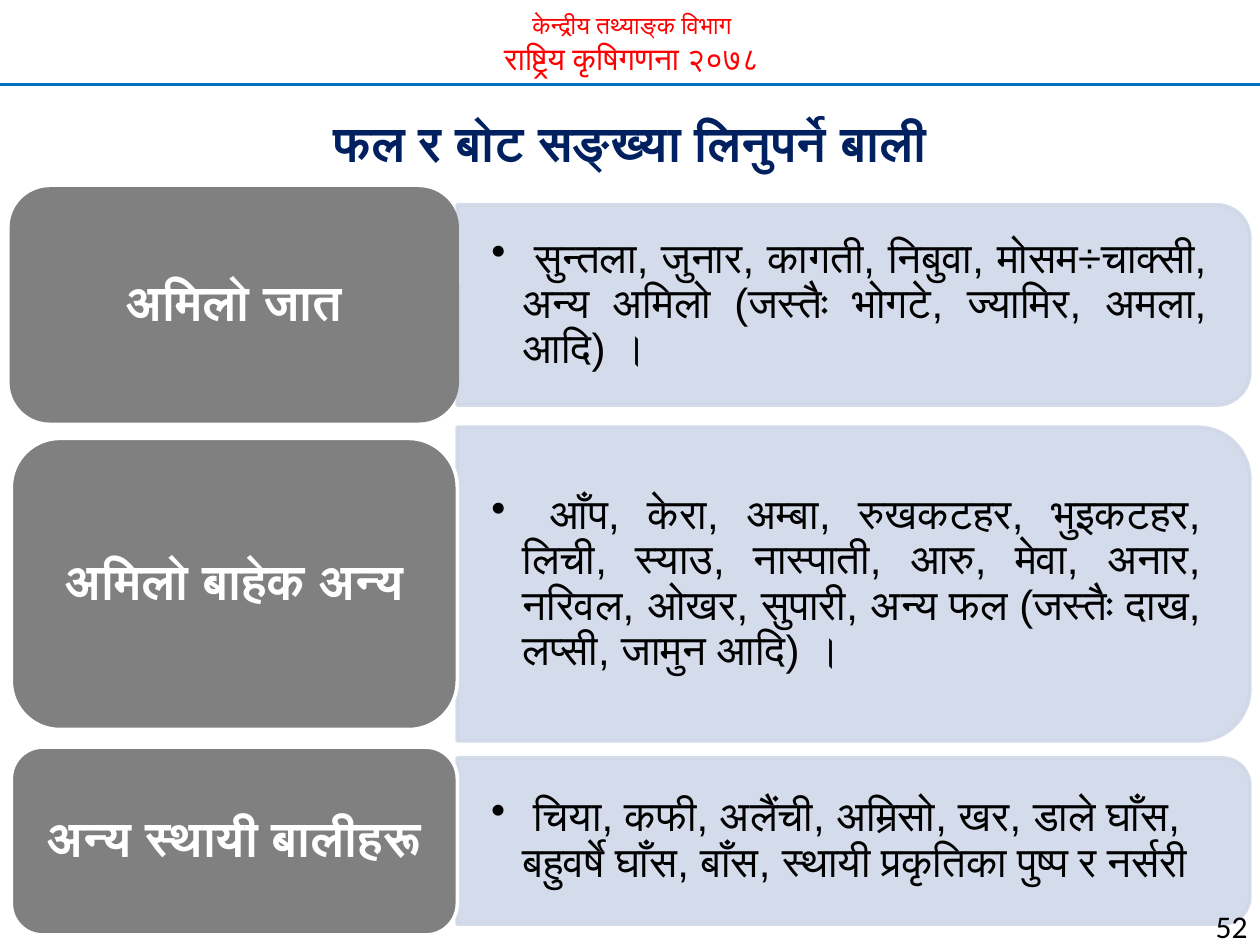
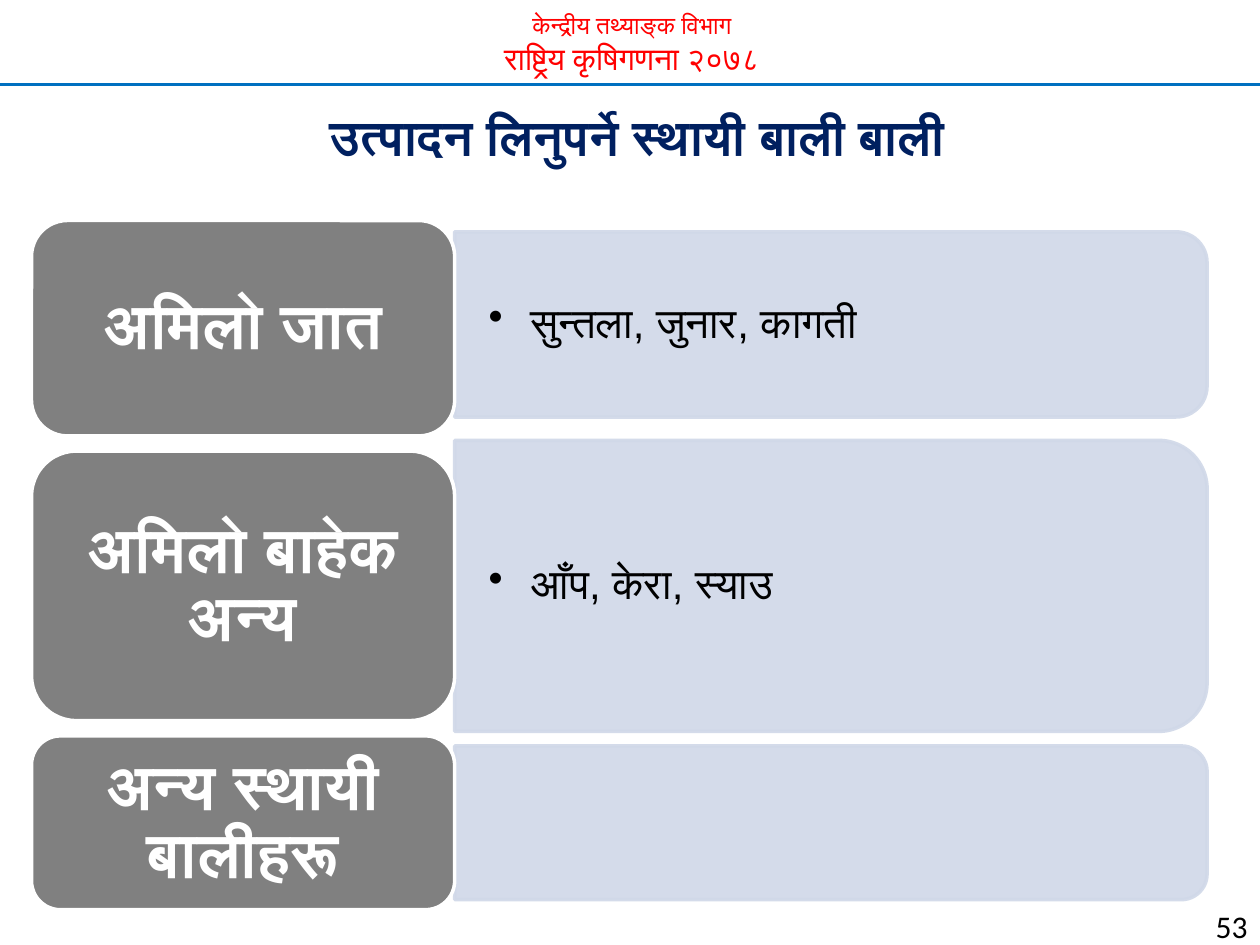
from lxml import etree
from pptx import Presentation
from pptx.dml.color import RGBColor
from pptx.enum.shapes import MSO_CONNECTOR, MSO_SHAPE
from pptx.enum.text import MSO_ANCHOR, MSO_AUTO_SIZE, PP_ALIGN
from pptx.oxml.ns import qn
from pptx.util import Inches, Pt

CENTER, LEFT, RIGHT, JUSTIFY = PP_ALIGN.CENTER, PP_ALIGN.LEFT, PP_ALIGN.RIGHT, PP_ALIGN.JUSTIFY
MIDDLE = MSO_ANCHOR.MIDDLE
ROUNDED, ROUNDED_END = MSO_SHAPE.ROUNDED_RECTANGLE, MSO_SHAPE.ROUND_2_SAME_RECTANGLE

COLORS = {
    "header": "FF0000",
    "rule": "0070C0",
    "title": "002060",
    "label": "808080",
    "panel": "D0D8E8",
    "text": "000000",
    "white": "FFFFFF",
}
SLIDE_WIDTH, SLIDE_HEIGHT = 10, 7.5
LABEL_SHARE = 0.36        # label column as a share of the diagram width
CORNER_INSET = 0.0488     # text inset at a rounded corner, per unit of height
HEADER_LINES = [("केन्द्रीय तथ्याङ्क विभाग", 14), ("राष्ट्रिय कृषिगणना २०७८", 18)]

# Each row: label, label height, panel height, panel shift, label outline, alignment, list
PAGES = [
    {
        "title": "फल र बोट सङ्ख्या लिनुपर्ने बाली", "title_box": (0, 0.75, 10, 0.75),
        "left": 0.09, "top": 1.5, "width": 9.83, "gap": 0.14,
        "label_size": 28, "label_insets": (0.12, 0.06), "number": "52",
        "rows": [
            ("अमिलो जात", 1.84, 1.59, 0, "label", JUSTIFY,
             "सुन्तला, जुनार, कागती, निबुवा, मोसम÷चाक्सी, अन्य अमिलो "
             "(जस्तैः भोगटे, ज्यामिर, अमला, आदि) ।"),
            ("अमिलो बाहेक अन्य", 2.31, 2.49, 0, "white", JUSTIFY,
             "आँप, केरा, अम्बा, रुखकटहर, भुइकटहर, लिची, स्याउ, नास्पाती, आरु, मेवा, अनार, "
             "नरिवल, ओखर, सुपारी, अन्य फल (जस्तैः दाख, लप्सी, जामुन आदि) ।"),
            ("अन्य स्थायी बालीहरू", 1.49, 1.32, 0, "white", LEFT,
             "चिया, कफी, अलैंची, अम्रिसो, खर, डाले घाँस, बहुवर्षे घाँस, बाँस, "
             "स्थायी प्रकृतिका पुष्प र नर्सरी"),
        ],
    },
    {
        "title": " उत्पादन लिनुपर्ने स्थायी बाली बाली", "title_box": (0.42, 0.83, 9.17, 0.5),
        "left": 0.25, "top": 1.75, "width": 9.33, "gap": 0.12,
        "label_size": 36, "label_insets": (0.15, 0.07), "number": "53",
        "rows": [
            ("अमिलो जात", 1.71, 1.47, -0.03, "white", LEFT, "सुन्तला, जुनार, कागती"),
            ("अमिलो बाहेक अन्य", 2.14, 2.31, 0, "white", LEFT, "आँप, केरा, स्याउ"),
            ("अन्य स्थायी बालीहरू", 1.38, 1.22, 0, "white", LEFT, None),
        ],
    },
]


def paint(shape, fill, outline, opacity=None):
    """Give a shape a flat fill and a 2 pt outline, optionally see-through."""
    shape.fill.solid()
    shape.fill.fore_color.rgb = RGBColor.from_string(COLORS[fill])
    shape.line.color.rgb = RGBColor.from_string(COLORS[outline])
    shape.line.width = Pt(2)
    if opacity:
        for color in shape._element.spPr.iter(qn("a:srgbClr")):
            etree.SubElement(color, qn("a:alpha")).set("val", str(opacity * 1000))


def style(para, align, size, color, font="Calibri", bold=False, spacing=None):
    """Format a paragraph and its runs."""
    para.alignment = align
    if spacing:
        para.line_spacing = spacing
    for span in para.runs:
        span.font.size, span.font.bold, span.font.name = Pt(size), bold, font
        span.font.color.rgb = RGBColor.from_string(COLORS[color])


deck = Presentation()
deck.slide_width, deck.slide_height = Inches(SLIDE_WIDTH), Inches(SLIDE_HEIGHT)
title_only = deck.slide_layouts[5]

for content in PAGES:
    page = deck.slides.add_slide(title_only)

    # Header band
    header = page.shapes.add_textbox(Inches(0.7), Inches(0.03), Inches(8.63), Inches(0.64))
    header.text_frame.word_wrap = True
    header.text_frame.text = "\n".join(text for text, size in HEADER_LINES)
    for para, (text, size) in zip(header.text_frame.paragraphs, HEADER_LINES):
        style(para, CENTER, size, "header")
    rule = page.shapes.add_connector(
        MSO_CONNECTOR.STRAIGHT, 0, Inches(0.67), deck.slide_width, Inches(0.67))
    rule.line.color.rgb = RGBColor.from_string(COLORS["rule"])
    rule.line.width = Pt(1.5)
    etree.SubElement(rule._element.spPr, qn("a:effectLst"))

    # Title
    title = page.shapes.title
    title.left, title.top, title.width, title.height = map(Inches, content["title_box"])
    paint(title, "white", "white")
    title.text_frame.text = content["title"]
    title.text_frame.auto_size = MSO_AUTO_SIZE.NONE
    title.text_frame.vertical_anchor = MIDDLE
    style(title.text_frame.paragraphs[0], CENTER, 28, "title", "Arial", True)

    # Rows: a label that overlaps the square end of its list panel
    label_width = content["width"] * LABEL_SHARE
    panel_left = content["left"] + label_width
    panel_width = content["width"] - label_width
    top = content["top"]
    for name, height, panel_height, shift, outline, align, items in content["rows"]:
        middle = top + height / 2 + shift
        panel = page.shapes.add_shape(
            ROUNDED_END,
            Inches(panel_left + (panel_width - panel_height) / 2),
            Inches(middle - panel_width / 2),
            Inches(panel_height), Inches(panel_width))
        panel.rotation = 90
        panel.shadow.inherit = False
        paint(panel, "panel", "panel", 90)

        if items:
            inset = panel_height * CORNER_INSET
            box = page.shapes.add_textbox(
                Inches(panel_left), Inches(middle - panel_height / 2 + inset),
                Inches(panel_width - inset), Inches(panel_height - 2 * inset))
            frame = box.text_frame
            frame.word_wrap = True
            frame.vertical_anchor = MIDDLE
            frame.margin_left = frame.margin_right = Inches(0.27)
            frame.margin_top = frame.margin_bottom = Inches(0.14)
            para = frame.paragraphs[0]
            para.level = 1
            properties = para._p.get_or_add_pPr()
            properties.set("marL", str(Inches(0.25)))
            properties.set("indent", str(-Inches(0.25)))
            etree.SubElement(properties, qn("a:buChar")).set("char", "•")
            para.add_run().text = " "
            para.add_run().text = items
            style(para, align, 24, "text", spacing=0.9)
            para.runs[1].font.name = "Arial"

        label = page.shapes.add_shape(
            ROUNDED, Inches(content["left"]), Inches(top), Inches(label_width), Inches(height))
        label.shadow.inherit = False
        paint(label, "label", outline)
        frame = label.text_frame
        frame.word_wrap = True
        frame.vertical_anchor = MIDDLE
        side, edge = map(Inches, content["label_insets"])
        frame.margin_left = frame.margin_right = side
        frame.margin_top = frame.margin_bottom = edge
        frame.text = name
        style(frame.paragraphs[0], CENTER, content["label_size"], "white", "Arial", True, 0.9)
        top += height + content["gap"]

    # Page number
    number = page.shapes.add_textbox(Inches(9.23), Inches(7), Inches(0.77), Inches(0.42))
    number.text_frame.word_wrap = True
    number.text_frame.text = content["number"]
    style(number.text_frame.paragraphs[0], RIGHT, 18, "text", spacing=1.5)

deck.save("out.pptx")
